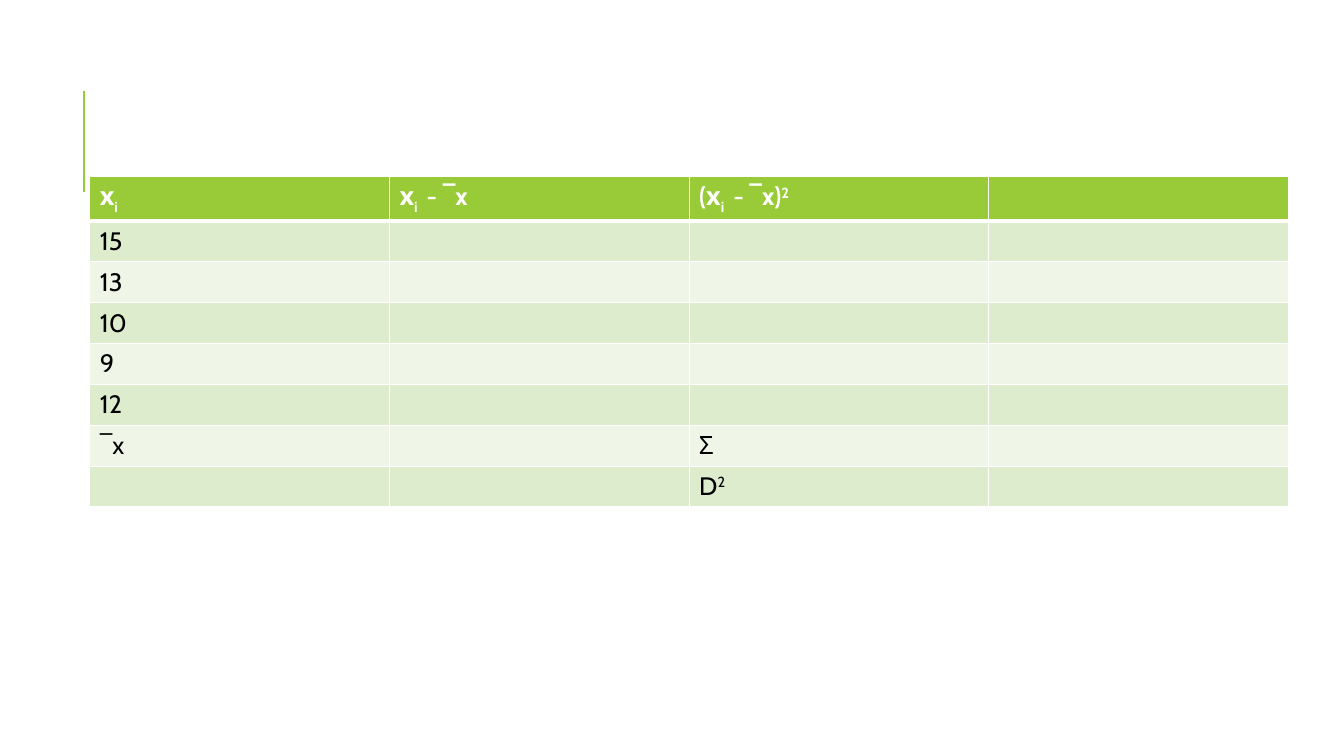
from lxml.etree import SubElement
from pptx import Presentation
from pptx.dml.color import RGBColor
from pptx.enum.shapes import MSO_CONNECTOR
from pptx.oxml.ns import qn
from pptx.util import Inches, Pt

COLORS = {
    "accent": "99CB38",
    "band_dark": "DEECCE",
    "band_light": "EFF6E8",
    "white": "FFFFFF",
    "black": "000000",
}
SUBSCRIPT, SUPERSCRIPT = -25, 30

HEADER = [
    [("х", 0), ("i", SUBSCRIPT)],
    [("х", 0), ("i ", SUBSCRIPT), (" - ‾x", 0)],
    [("(х", 0), ("i ", SUBSCRIPT), (" - ‾x)", 0), ("2", SUPERSCRIPT)],
    [],
]
VALUES = [[[(value, 0)], [], [], []] for value in ("15", "13", "10", "9", "12")]
TOTALS = [
    [[("‾x", 0)], [], [("Σ", 0)], []],
    [[], [], [("D", 0), ("2", SUPERSCRIPT)], []],
]
ROWS = [HEADER, *VALUES, *TOTALS]


def color(name):
    return RGBColor.from_string(COLORS[name])


def add_border(cell, side, width):
    properties = cell._tc.get_or_add_tcPr()
    line = SubElement(properties, qn(f"a:{side}"), w=str(Pt(width)))
    fill = SubElement(line, qn("a:solidFill"))
    SubElement(fill, qn("a:srgbClr"), val=COLORS["white"])


presentation = Presentation()
presentation.slide_width = Inches(13.33)
presentation.slide_height = Inches(7.5)
slide = presentation.slides.add_slide(presentation.slide_layouts[6])

accent_line = slide.shapes.add_connector(
    MSO_CONNECTOR.STRAIGHT, Inches(0.83), Inches(1.9), Inches(0.83), Inches(0.9)
)
accent_line.line.color.rgb = color("accent")
accent_line.line.width = Pt(1.5)
SubElement(accent_line._element.spPr, qn("a:effectLst"))

table = slide.shapes.add_table(
    len(ROWS), len(HEADER), Inches(0.89), Inches(1.75), Inches(11.89), Inches(3.24)
).table

for row_index, row in enumerate(ROWS):
    is_header = row_index == 0
    if is_header:
        fill_name = "accent"
    else:
        fill_name = "band_dark" if row_index % 2 else "band_light"
    for column_index, parts in enumerate(row):
        cell = table.cell(row_index, column_index)
        for side in ("lnL", "lnR", "lnT", "lnB"):
            header_edge = (is_header and side == "lnB") or (row_index == 1 and side == "lnT")
            add_border(cell, side, 3 if header_edge else 1)
        cell.fill.solid()
        cell.fill.fore_color.rgb = color(fill_name)
        paragraph = cell.text_frame.paragraphs[0]
        paragraph.font.size = Pt(18)
        for text, baseline in parts:
            run = paragraph.add_run()
            run.text = text
            run.font.name = "Cabin"
            run.font.size = Pt(18)
            run.font.bold = is_header
            run.font.color.rgb = color("white" if is_header else "black")
            if baseline:
                run.font._element.set("baseline", str(baseline * 1000))

presentation.save("out.pptx")
